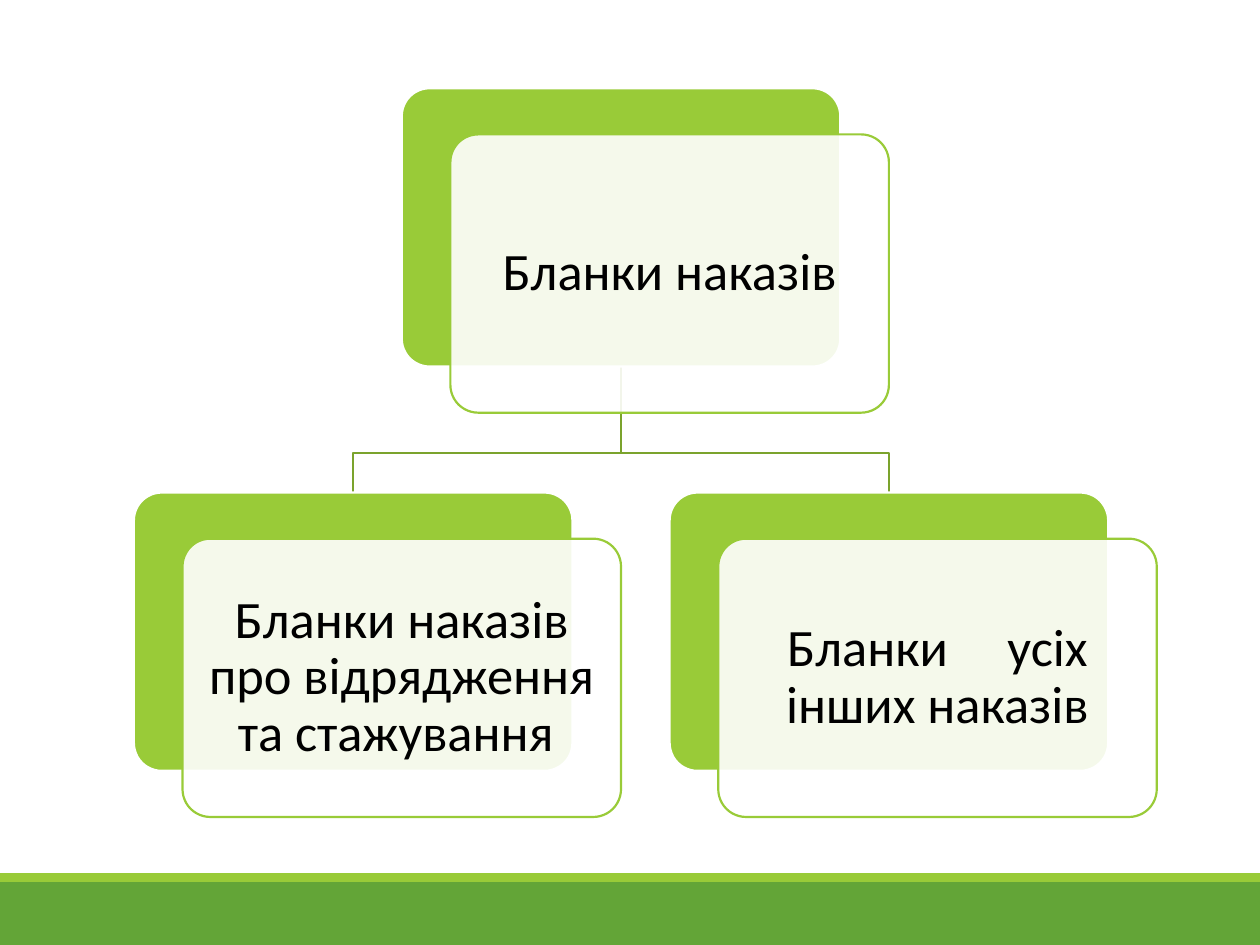
from lxml import etree
from pptx import Presentation
from pptx.dml.color import RGBColor
from pptx.enum.shapes import MSO_SHAPE
from pptx.enum.text import MSO_ANCHOR, PP_ALIGN
from pptx.oxml.ns import qn
from pptx.util import Cm, Pt

RECT = MSO_SHAPE.RECTANGLE
ROUND = MSO_SHAPE.ROUNDED_RECTANGLE
MIDDLE = MSO_ANCHOR.MIDDLE
CENTER = PP_ALIGN.CENTER

LIME, GREEN, OLIVE = "99CB38", "63A537", "7BA32D"
WHITE, BLACK = "FFFFFF", "000000"
WIDE, HIGH = 25.4, 19.05
CARD_W, CARD_H = 8.84, 5.61
SHIFT_X, SHIFT_Y = 0.98, 0.93
STEP_X, STEP_Y = 10.8, 8.15
BEND = 1.75
PAD = 0.17


def paint(part, color):
    part.solid()
    part.fore_color.rgb = RGBColor.from_string(color)


def outline(shape, color):
    paint(shape.line.fill, color)
    shape.line.width = Pt(1.25)


def add_box(slide, kind, x, y, w, h, color):
    box = slide.shapes.add_shape(kind, Cm(x), Cm(y), Cm(w), Cm(h))
    box.shadow.inherit = False
    paint(box.fill, color)
    box.line.fill.background()
    return box


def add_panel(slide, x, y, fill, line):
    panel = add_box(slide, ROUND, x, y, CARD_W, CARD_H, fill)
    panel.adjustments[0] = 0.1
    outline(panel, line)
    return panel


def fade(shape, percent):
    color = shape.fill._xPr.find(qn("a:solidFill"))[0]
    etree.SubElement(color, qn("a:alpha")).set("val", str(percent * 1000))


def add_label(slide, x, y, w, h, runs):
    box = slide.shapes.add_textbox(Cm(x), Cm(y), Cm(w), Cm(h))
    frame = box.text_frame
    frame.word_wrap = True
    frame.vertical_anchor = MIDDLE
    frame.margin_left = frame.margin_right = Cm(0.3)
    frame.margin_top = frame.margin_bottom = Cm(0.3)
    para = frame.paragraphs[0]
    para.alignment = CENTER
    para.line_spacing = 0.9
    for text, space in runs:
        run = para.add_run()
        run.text = text
        run.font.size = Pt(30)
        run.font.name = "Calibri"
        run.font.color.rgb = RGBColor.from_string(BLACK)
        if space:
            run.font._element.set("spc", str(space * 100))


def add_card(slide, x, y, runs):
    add_panel(slide, x, y, LIME, WHITE)
    left, top = x + SHIFT_X, y + SHIFT_Y
    fade(add_panel(slide, left, top, WHITE, LIME), 90)
    add_label(slide, left + PAD, top + PAD,
              CARD_W - 2 * PAD, CARD_H - 2 * PAD, runs)


def add_branch(slide, x, y, end_x, end_y):
    path = slide.shapes.build_freeform(Cm(x), Cm(y))
    bend = y + BEND
    points = [(x, bend), (end_x, bend), (end_x, end_y)]
    path.add_line_segments([(Cm(a), Cm(b)) for a, b in points], close=False)
    branch = path.convert_to_shape()
    branch.shadow.inherit = False
    branch.fill.background()
    outline(branch, OLIVE)


def add_tree(slide, x, y, root, leaves):
    root_x = x + STEP_X * (len(leaves) - 1) / 2
    leaf_y = y + STEP_Y
    spots = [x + STEP_X * i for i in range(len(leaves))]
    half = CARD_W / 2
    for spot in reversed(spots):
        add_branch(slide, root_x + half, y + CARD_H, spot + half, leaf_y)
    add_card(slide, root_x, y, root)
    for spot, runs in zip(spots, leaves):
        add_card(slide, spot, leaf_y, runs)


def add_footer(slide, y):
    add_box(slide, RECT, 0, y, WIDE, HIGH - y, GREEN)
    add_box(slide, RECT, 0, y - 0.18, WIDE, 0.18, LIME)


def main():
    deck = Presentation()
    deck.slide_width, deck.slide_height = Cm(WIDE), Cm(HIGH)
    slide = deck.slides.add_slide(deck.slide_layouts[6])
    add_footer(slide, 17.78)
    add_tree(slide, 2.7, 1.78, [("Бланки наказів", 0)], [
        [("Бланки наказів про відрядження та стажування ", 0)],
        [("Бланки", 0), (" ", 27), ("усіх інших наказів", 0)],
    ])
    deck.save("out.pptx")


if __name__ == "__main__":
    main()
